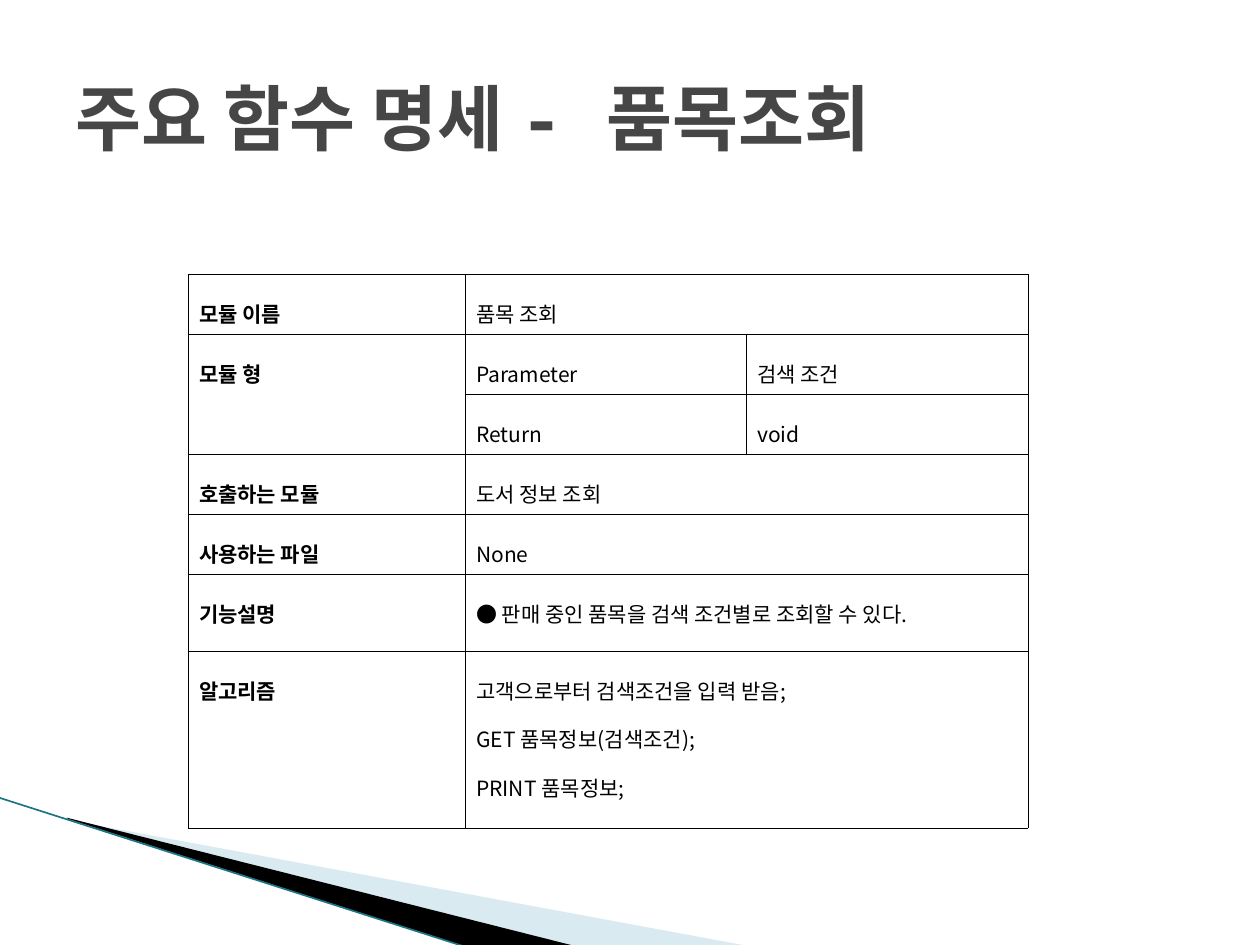
from lxml import etree
from pptx import Presentation
from pptx import util as u
from pptx.dml.color import RGBColor
from pptx.enum import shapes, text
from pptx.oxml import ns

# Content: row label, then its values; an empty label continues the one above
TITLE = "주요 함수 명세 - 품목조회"
ROWS = [
    ("모듈 이름", ["품목 조회"]),
    ("모듈 형", ["Parameter", "검색 조건"]),
    ("", ["Return", "void"]),
    ("호출하는 모듈", ["도서 정보 조회"]),
    ("사용하는 파일", ["None"]),
    ("기능설명", ["● 판매 중인 품목을 검색 조건별로 조회할 수 있다."]),
    ("알고리즘", ["고객으로부터 검색조건을 입력 받음;\nGET 품목정보(검색조건);\nPRINT 품목정보;"]),
]
COLS = [2.2, 2.23, 2.24]
HEIGHTS = [2.38 / 5] * 5 + [0.61, 1.4]  # five equal short rows
WEDGES = [
    ("pale", 40, [(0.55, 6.51), (5.95, 7.51), (4.56, 7.51), (0.55, 6.5)]),
    ("black", 100, [(0.53, 6.49), (4.57, 7.51), (3.72, 7.52), (0.54, 6.5)]),
]
THEME = {
    "title": "464646", "black": "000000", "pale": "A0CBDC", "edge": "1B7587",
    "title_size": 41, "body_size": 12,
    "title_font": "Noto Sans Mono", "body_font": "Noto Sans CJK KR",
}


def color(name):
    return RGBColor.from_string(THEME[name])


def write(tf, content, *, role="body", ink="black", bold=False, align=None, spacing=None):
    tf.word_wrap = True
    for i, line in enumerate(content.split("\n")):
        p = tf.paragraphs[0] if i == 0 else tf.add_paragraph()
        p.alignment, p.line_spacing = align, spacing
        r = p.add_run()
        r.text = line
        r.font.name, r.font.bold = THEME[role + "_font"], bold
        r.font.size = u.Pt(THEME[role + "_size"])
        r.font.color.rgb = color(ink)


def style_cell(cell):
    """Clear the fill and rule all four sides."""
    cell.fill.background()
    tc_pr = cell._tc.get_or_add_tcPr()
    for i, side in enumerate(("lnL", "lnR", "lnT", "lnB")):
        ln = etree.Element(ns.qn("a:" + side), w=str(u.Pt(0.25)))
        fill = etree.SubElement(ln, ns.qn("a:solidFill"))
        etree.SubElement(fill, ns.qn("a:srgbClr"), val=THEME["black"])
        tc_pr.insert(i, ln)


def add_wedge(s, ink, alpha, points):
    pts = [(u.Inches(x), u.Inches(y)) for x, y in points]
    fb = s.shapes.build_freeform(*pts[0])
    fb.add_line_segments(pts[1:], close=True)
    sp = fb.convert_to_shape()
    sp.shadow.inherit = False
    sp.line.fill.background()
    sp.fill.solid()
    sp.fill.fore_color.rgb = color(ink)
    if alpha < 100:
        clr = sp._element.spPr.find(".//" + ns.qn("a:srgbClr"))
        etree.SubElement(clr, ns.qn("a:alpha"), val=str(alpha * 1000))


def add_spec_table(s):
    frame = s.shapes.add_table(len(ROWS), len(COLS), u.Inches(1.49), u.Inches(2.18),
                               u.Inches(sum(COLS)), u.Inches(sum(HEIGHTS)))
    table = frame.table
    table.first_row = table.horz_banding = False
    for col, width in zip(table.columns, COLS):
        col.width = u.Inches(width)
    for row, height in zip(table.rows, HEIGHTS):
        row.height = u.Inches(height)
    for cell in table.iter_cells():
        style_cell(cell)
        cell.margin_left = cell.margin_right = u.Inches(0.09)
        cell.margin_top = cell.margin_bottom = u.Inches(0.04)

    body = {"align": text.PP_ALIGN.JUSTIFY, "spacing": 1.6}
    for r, (label, values) in enumerate(ROWS):
        if label:
            write(table.cell(r, 0).text_frame, label, bold=True, **body)
        else:
            table.cell(r - 1, 0).merge(table.cell(r, 0))
        if len(values) == 1:
            table.cell(r, 1).merge(table.cell(r, 2))
        for c, value in enumerate(values, 1):
            write(table.cell(r, c).text_frame, value, **body)


def main():
    prs = Presentation()
    prs.slide_width, prs.slide_height = u.Inches(10), u.Inches(7.5)
    s = prs.slides.add_slide(prs.slide_layouts[6])

    # Corner decoration
    for wedge in WEDGES:
        add_wedge(s, *wedge)
    edge = s.shapes.add_connector(shapes.MSO_CONNECTOR.STRAIGHT, u.Inches(-0.01),
                                  u.Inches(6.33), u.Inches(3.71), u.Inches(7.52))
    edge.line.color.rgb = color("edge")
    edge.line.width = u.Pt(0.95)
    etree.SubElement(edge._element.spPr, ns.qn("a:effectLst"))

    # Title
    box = s.shapes.add_textbox(u.Inches(0.5), u.Inches(0.3), u.Inches(9), u.Inches(1.25))
    box.text_frame.vertical_anchor = text.MSO_ANCHOR.MIDDLE
    write(box.text_frame, TITLE, role="title", ink="title", bold=True)

    # Function specification
    add_spec_table(s)
    prs.save("out.pptx")


if __name__ == "__main__":
    main()
